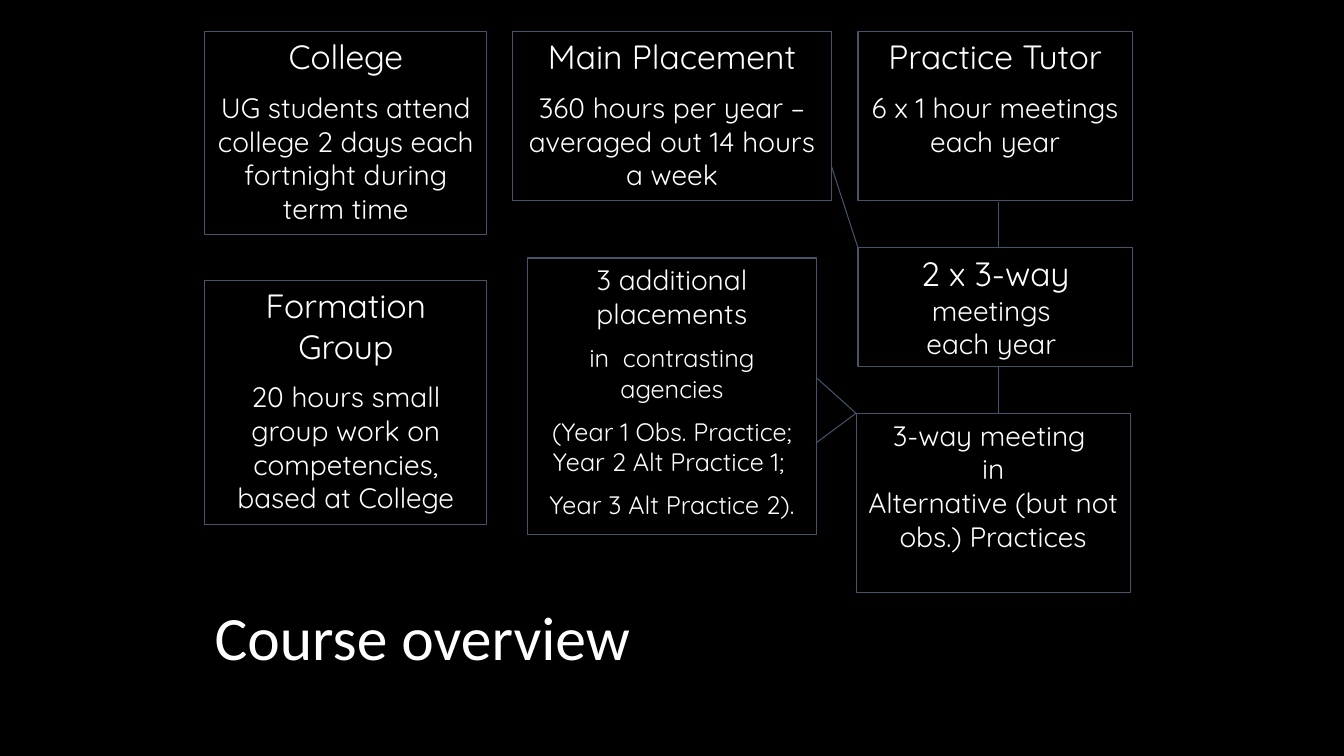
from pptx import Presentation
from pptx import util as u
from pptx.dml import color
from pptx.enum import shapes, text
from pptx.oxml import ns
from lxml import etree

HUES = {"back": "000000", "text": "FFFFFF", "line": "44546A"}
LEFT, RIGHT, WIDE, NARROW = 2.03, 8.51, 2.8, 2.72
TOP, SPINE = 0.31, 9.9

BOXES = [
    ((LEFT, TOP, WIDE, 2.02), [
        [("College", 24)],
        [("UG students attend college 2 days each fortnight during term time", 20)]]),
    ((LEFT, 2.78, WIDE, 2.42), [
        [("Formation Group", 24)],
        [("20 hours small group work on competencies, based at College", 20)]]),
    ((5.08, TOP, 3.17, 1.68), [
        [("Main Placement", 24)],
        [("360 hours per year – averaged out 14 hours a week", 20)]]),
    ((5.23, 2.56, 2.87, 2.74), [
        [("3 additional placements", 20)],
        [("in  contrasting agencies", 18)],
        [("(Year 1 Obs. Practice; Year 2 Alt Practice 1; ", 18)],
        [("Year 3 Alt Practice 2).", 18)]]),
    ((RIGHT, TOP, NARROW, 1.68), [
        [("Practice Tutor", 24)],
        [("6 x 1 hour meetings each year", 20)]]),
    ((RIGHT, 2.46, NARROW, 1.18), [
        [("2 x 3-way ", 24), ("meetings \neach year ", 20)]]),
    ((8.49, 4.1, NARROW, 1.78), [
        [("3-way meeting \nin\nAlternative (but not obs.) Practices", 20)]]),
]

LINKS = [
    (8.25, 1.66, RIGHT, 2.46),
    (8.1, 3.75, 8.49, 4.1),
    (8.1, 4.39, 8.49, 4.1),
    (SPINE, 2, SPINE, 2.46),
    (SPINE, 3.64, SPINE, 4.1),
]


def rgb(name):
    """Return the named colour."""
    return color.RGBColor.from_string(HUES[name])


def stroke(line):
    """Give an outline or link the thin slate line."""
    line.color.rgb = rgb("line")
    line.width = u.Pt(0.75)


def add_run(para, words, size=20, font="Quicksand", hue="text"):
    """Add formatted words to a paragraph, breaking at newlines."""
    for i, part in enumerate(words.split("\n")):
        if i:
            para.add_line_break()
        run = para.add_run()
        run.text = part
        run.font.size = u.Pt(size)
        run.font.name = font
        run.font.color.rgb = rgb(hue)


def add_box(slide, spot, paras):
    """Draw an outlined box with centred paragraphs."""
    box = slide.shapes.add_shape(
        shapes.MSO_SHAPE.RECTANGLE, *map(u.Inches, spot))
    box.shadow.inherit = False
    box.fill.background()
    stroke(box.line)
    frame = box.text_frame
    frame.word_wrap = True
    frame.vertical_anchor = text.MSO_ANCHOR.TOP
    for i, runs in enumerate(paras):
        para = frame.add_paragraph() if i else frame.paragraphs[0]
        para.alignment = text.PP_ALIGN.CENTER
        para.space_before = u.Pt(runs[0][1] / 2 if i else 0)
        for words, size in runs:
            add_run(para, words, size=size)


def add_link(slide, ends):
    """Join two points with a straight line."""
    link = slide.shapes.add_connector(
        shapes.MSO_CONNECTOR.STRAIGHT, *map(u.Inches, ends))
    stroke(link.line)
    etree.SubElement(link._element.spPr, ns.qn("a:effectLst"))


def add_title(slide, words, spot):
    """Add the slide heading."""
    frame = slide.shapes.add_textbox(*map(u.Inches, spot)).text_frame
    frame.word_wrap = True
    add_run(frame.paragraphs[0], words, size=44, font="Calibri")


def main():
    """Build and save the course overview."""
    deck = Presentation()
    deck.slide_width, deck.slide_height = u.Inches(13.33), u.Inches(7.5)
    slide = deck.slides.add_slide(deck.slide_layouts[6])
    slide.background.fill.solid()
    slide.background.fill.fore_color.rgb = rgb("back")
    for spot, paras in BOXES:
        add_box(slide, spot, paras)
    for ends in LINKS:
        add_link(slide, ends)
    add_title(slide, "Course overview", (LEFT, 5.89, 5.88, 0.84))
    deck.save("out.pptx")


if __name__ == "__main__":
    main()
